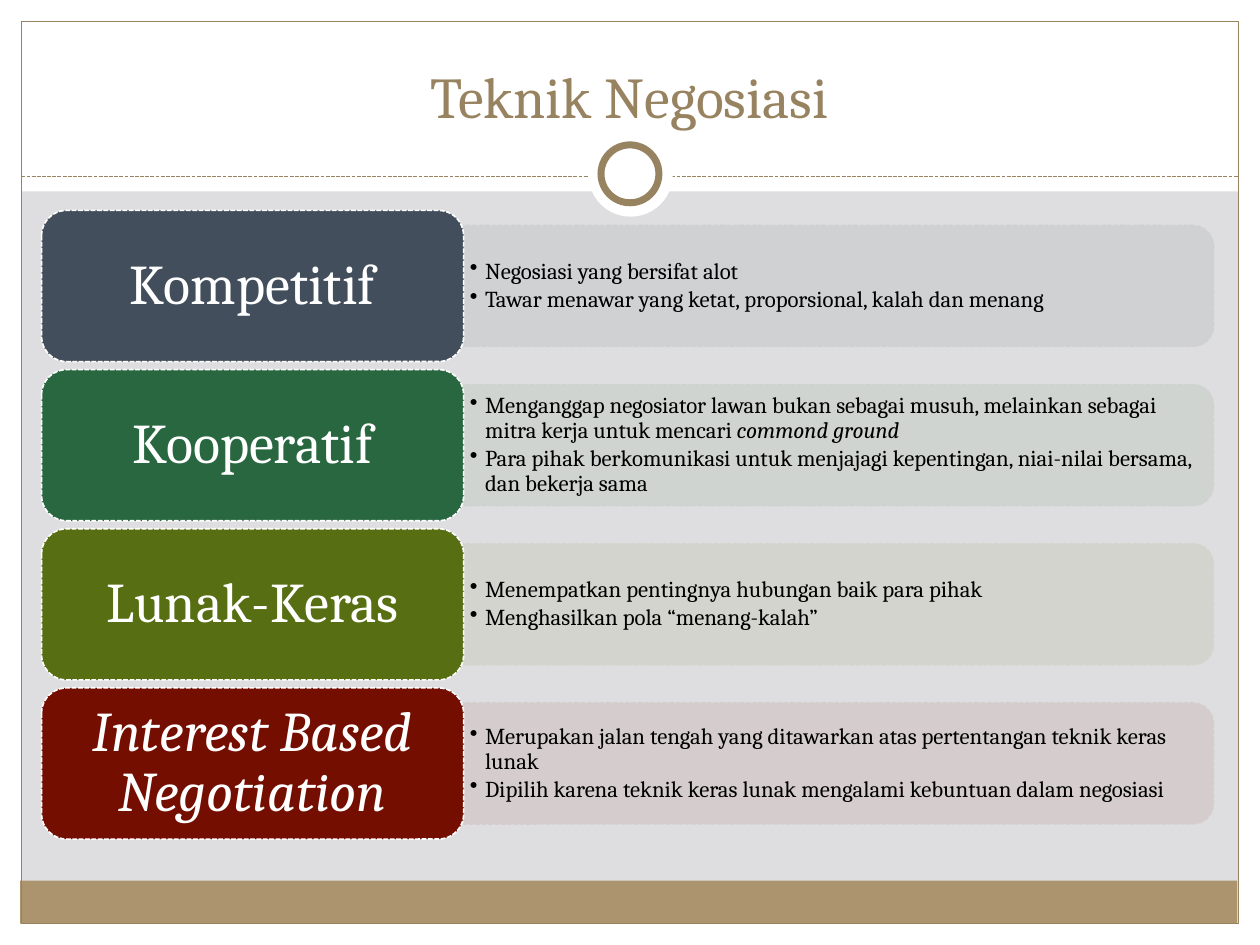
from dataclasses import dataclass
from typing import Optional

from pptx import Presentation
from pptx.dml.color import RGBColor
from pptx.enum.dml import MSO_LINE
from pptx.enum.shapes import MSO_CONNECTOR, MSO_SHAPE
from pptx.enum.text import MSO_ANCHOR, MSO_AUTO_SIZE, PP_ALIGN
from pptx.oxml.ns import qn
from pptx.util import Inches, Pt

FONT = "Cambria"
WHITE = RGBColor(0xFF, 0xFF, 0xFF)
BLACK = RGBColor(0, 0, 0)
BACKGROUND = RGBColor(0xDE, 0xDE, 0xE0)
TAN = RGBColor(0xAC, 0x95, 0x6E)
BROWN = RGBColor(0x98, 0x83, 0x61)

# Row geometry in inches
ROW_TOP, ROW_PITCH = 1.67, (5.46 - 1.67) / 3
LABEL_LEFT, LABEL_W, LABEL_H = 0.33, 3.35, 1.2
PANEL_LEFT = LABEL_LEFT + LABEL_W
PANEL_W, PANEL_H = 5.95, 0.96
TEXT_W, TEXT_H = 5.91, 0.87


@dataclass
class Span:
    text: str
    italic: bool = False


@dataclass
class Technique:
    label: Span
    color: RGBColor
    tint: RGBColor
    points: list[list[Span]]


TECHNIQUES = [
    Technique(Span("Kompetitif"), RGBColor(0x42, 0x4E, 0x5B), RGBColor(0xCF, 0xD0, 0xD2), [
        [Span("Negosiasi yang bersifat alot")],
        [Span("Tawar menawar yang ketat, proporsional, kalah dan menang")],
    ]),
    Technique(Span("Kooperatif"), RGBColor(0x28, 0x67, 0x40), RGBColor(0xCE, 0xD3, 0xD0), [
        [Span("Menganggap negosiator lawan bukan sebagai musuh, melainkan sebagai "
              "mitra kerja untuk mencari "), Span("commond ground", True)],
        [Span("Para pihak berkomunikasi untuk menjajagi kepentingan, "
              "niai-nilai bersama, dan bekerja sama")],
    ]),
    Technique(Span("Lunak-Keras"), RGBColor(0x57, 0x6F, 0x12), RGBColor(0xD3, 0xD4, 0xCD), [
        [Span("Menempatkan pentingnya hubungan baik para pihak")],
        [Span("Menghasilkan pola “menang-kalah”")],
    ]),
    Technique(Span("Interest Based Negotiation", True), RGBColor(0x73, 0x0E, 0x00),
              RGBColor(0xD5, 0xCC, 0xCC), [
        [Span("Merupakan jalan tengah yang ditawarkan atas pertentangan teknik keras lunak")],
        [Span("Dipilih karena teknik keras lunak mengalami kebuntuan dalam negosiasi")],
    ]),
]


def add_box(s, kind, left: float, top: float, width: float, height: float,
            fill: Optional[RGBColor] = None, line: Optional[RGBColor] = None,
            line_w: float = 0.75, dashed: bool = False):
    sp = s.shapes.add_shape(kind, Inches(left), Inches(top), Inches(width), Inches(height))
    sp.shadow.inherit = False
    if fill is None:
        sp.fill.background()
    else:
        sp.fill.solid()
        sp.fill.fore_color.rgb = fill
    if line is None:
        sp.line.fill.background()
    else:
        sp.line.color.rgb = line
        sp.line.width = Pt(line_w)
        if dashed:
            sp.line.dash_style = MSO_LINE.SQUARE_DOT
    return sp


def add_run(p, span: Span, size: float, color: RGBColor) -> None:
    r = p.add_run()
    r.text = span.text
    r.font.name = FONT
    r.font.size = Pt(size)
    r.font.italic = span.italic
    r.font.color.rgb = color


def set_frame(tf, inset_x: float, inset_y: float) -> None:
    tf.word_wrap = True
    tf.vertical_anchor = MSO_ANCHOR.MIDDLE
    tf.margin_left = tf.margin_right = Inches(inset_x)
    tf.margin_top = tf.margin_bottom = Inches(inset_y)


def set_bullet(p) -> None:
    pPr = p._p.get_or_add_pPr()
    pPr.set("marL", str(Inches(0.12)))
    pPr.set("indent", str(-Inches(0.12)))
    bullet = pPr.makeelement(qn("a:buChar"), {"char": "•"})
    pPr.append(bullet)


def set_alpha(sp, percent: int) -> None:
    for color in sp._element.spPr.iter(qn("a:srgbClr")):
        alpha = color.makeelement(qn("a:alpha"), {"val": str(percent * 1000)})
        color.append(alpha)


def add_frame(s) -> None:
    # White margins, bottom band and border
    for box in ((0, 7.33, 10, 0.17), (0, 0, 10, 1.52), (0, 0, 0.17, 7.5), (9.83, 0, 0.17, 7.5)):
        add_box(s, MSO_SHAPE.RECTANGLE, *box, fill=WHITE)
    add_box(s, MSO_SHAPE.RECTANGLE, 0.16, 6.99, 9.66, 0.34, fill=TAN)
    add_box(s, MSO_SHAPE.RECTANGLE, 0.17, 0.17, 9.66, 7.16, line=BROWN)

    # Dashed rule with the ring on it
    rule = s.shapes.add_connector(MSO_CONNECTOR.STRAIGHT, Inches(0.17), Inches(1.4),
                                  Inches(9.83), Inches(1.4))
    rule.line.color.rgb = BROWN
    rule.line.width = Pt(0.75)
    rule.line.dash_style = MSO_LINE.SQUARE_DOT
    spPr = rule._element.spPr
    spPr.append(spPr.makeelement(qn("a:effectLst"), {}))
    add_box(s, MSO_SHAPE.OVAL, 4.67, 1.05, 0.67, 0.67, fill=WHITE)
    add_box(s, MSO_SHAPE.OVAL, 4.77, 1.15, 0.46, 0.46, fill=WHITE, line=BROWN, line_w=4)


def add_title(s, text: str) -> None:
    title = s.shapes.title
    title.left, title.top = Inches(0.33), Inches(0.25)
    title.width, title.height = Inches(9.33), Inches(0.83)
    tf = title.text_frame
    tf.auto_size = MSO_AUTO_SIZE.NONE
    tf.vertical_anchor = MSO_ANCHOR.BOTTOM
    p = tf.paragraphs[0]
    p.alignment = PP_ALIGN.CENTER
    add_run(p, Span(text), 33, BROWN)
    # Bring the title in front of the white header
    title._element.getparent().append(title._element)


def add_technique(s, item: Technique, top: float) -> None:
    middle = top + LABEL_H / 2

    # Panel: an upright shape turned a quarter so its round corners face right
    panel = add_box(s, MSO_SHAPE.ROUND_2_SAME_RECTANGLE,
                    PANEL_LEFT + (PANEL_W - PANEL_H) / 2, middle - PANEL_W / 2,
                    PANEL_H, PANEL_W, item.tint, item.tint, 0.9, True)
    panel.rotation = 90
    set_alpha(panel, 90)

    # Bulleted points
    box = s.shapes.add_textbox(Inches(PANEL_LEFT), Inches(middle - TEXT_H / 2),
                               Inches(TEXT_W), Inches(TEXT_H))
    tf = box.text_frame
    set_frame(tf, 0.05, 0.03)
    for i, spans in enumerate(item.points):
        p = tf.add_paragraph() if i else tf.paragraphs[0]
        p.level = 1
        p.line_spacing = 0.9
        p.space_after = Pt(2)
        set_bullet(p)
        for span in spans:
            add_run(p, span, 13, BLACK)

    # Label
    label = add_box(s, MSO_SHAPE.ROUNDED_RECTANGLE, LABEL_LEFT, top, LABEL_W, LABEL_H,
                    item.color, WHITE, 0.9, True)
    set_frame(label.text_frame, 0.13, 0.07)
    p = label.text_frame.paragraphs[0]
    p.alignment = PP_ALIGN.CENTER
    p.line_spacing = 0.9
    add_run(p, item.label, 32, WHITE)


def main() -> None:
    prs = Presentation()
    prs.slide_width, prs.slide_height = Inches(10), Inches(7.5)
    s = prs.slides.add_slide(prs.slide_layouts[5])
    s.background.fill.solid()
    s.background.fill.fore_color.rgb = BACKGROUND
    add_frame(s)
    add_title(s, "Teknik Negosiasi")
    for i, item in enumerate(TECHNIQUES):
        add_technique(s, item, ROW_TOP + i * ROW_PITCH)
    prs.save("out.pptx")


if __name__ == "__main__":
    main()
